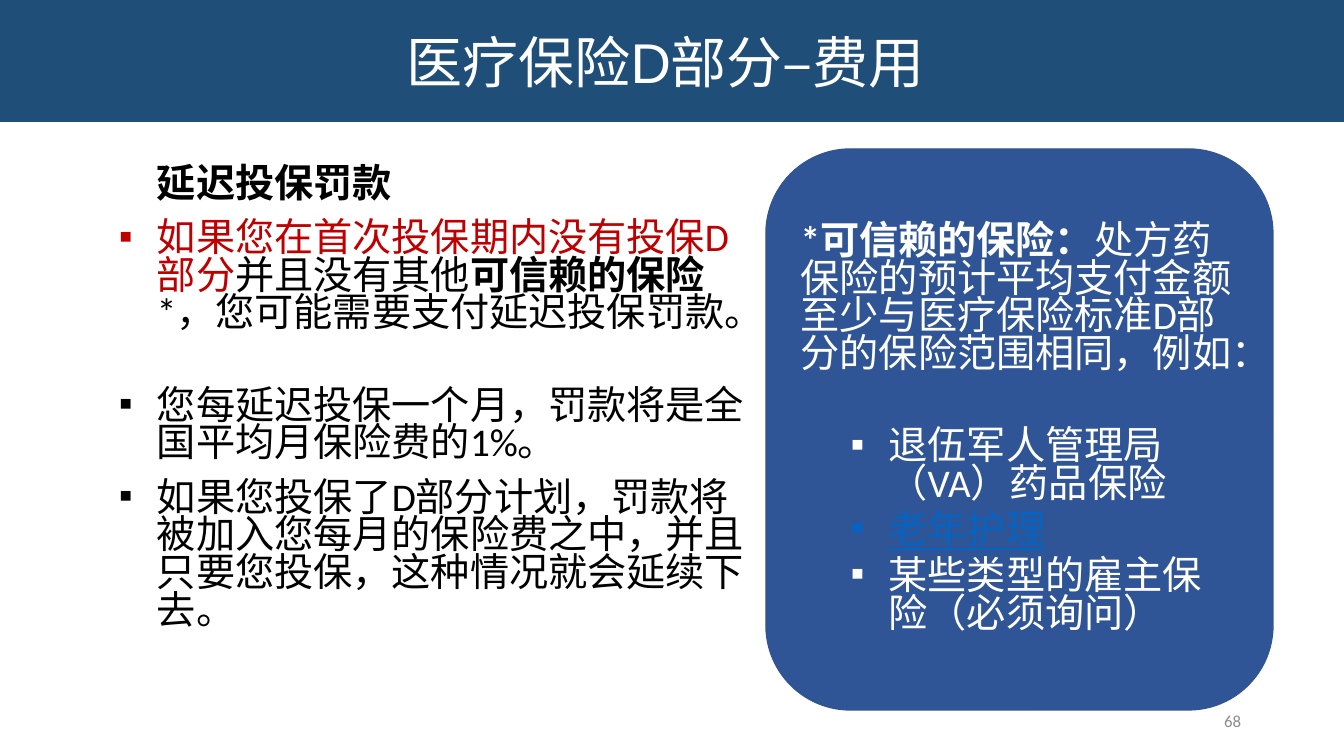
from lxml import etree
from pptx import Presentation
from pptx.dml.color import RGBColor
from pptx.enum.shapes import MSO_SHAPE
from pptx.enum.text import MSO_ANCHOR, PP_ALIGN
from pptx.oxml.ns import qn
from pptx.util import Emu, Pt

RECT, ROUND = MSO_SHAPE.RECTANGLE, MSO_SHAPE.ROUNDED_RECTANGLE
TOP, MIDDLE = MSO_ANCHOR.TOP, MSO_ANCHOR.MIDDLE
LEFT, CENTER, RIGHT = PP_ALIGN.LEFT, PP_ALIGN.CENTER, PP_ALIGN.RIGHT

COLORS = {
    "banner": "1F4E79", "panel": "2F5597", "panel_line": "325491",
    "white": "FFFFFF", "black": "000000", "red": "C00000",
    "blue": "0563C1", "gray": "8C8C8C",
}
INDENT, HANGING = 88, 38
# Paragraph spacing in points
GAP_SMALL, GAP, GAP_WIDE = 6, 12, 39


def px(n):
    return Emu(round(n * 914400 / 100.8))


def rgb(name):
    return RGBColor.from_string(COLORS[name])


def add_panel(s, kind, box, fill, line=None):
    sp = s.shapes.add_shape(kind, *map(px, box))
    sp.shadow.inherit = False
    sp.fill.solid()
    sp.fill.fore_color.rgb = rgb(fill)
    if line:
        sp.line.color.rgb = rgb(line)
        sp.line.width = Pt(1)
    else:
        sp.line.fill.background()
    return sp


def set_frame(sp, anchor):
    tf = sp.text_frame
    tf.word_wrap = True
    tf.vertical_anchor = anchor
    return tf


def next_paragraph(tf):
    first = tf.paragraphs[0]
    return tf.add_paragraph() if first.runs else first


def add_run(p, text, color, size=28, font="Calibri", bold=False, underline=False):
    r = p.add_run()
    r.text = text
    r.font.size, r.font.name = Pt(size), font
    r.font.bold, r.font.underline = bold, underline
    r.font.color.rgb = rgb(color)


def add_body(tf, after, indent=0, bullet=False):
    p = next_paragraph(tf)
    p.alignment = LEFT
    p.line_spacing = 0.8
    p.space_after = Pt(after)
    pPr = p._p.get_or_add_pPr()
    pPr.set("marL", str(px(indent)))
    pPr.set("indent", str(px(-HANGING if bullet else 0)))
    if bullet:
        etree.SubElement(pPr, qn("a:buFont"), typeface="Arial")
        etree.SubElement(pPr, qn("a:buChar"), char="▪")
    return p


def add_bullet(tf, after):
    return add_body(tf, after, INDENT, True)


def add_title(s):
    sp = add_panel(s, RECT, (0, 0, 1344, 122), "banner")
    p = next_paragraph(set_frame(sp, MIDDLE))
    p.alignment = CENTER
    add_run(p, "医疗保险D部分–费用 ", "white", 40, "Arial")


def add_penalty(s):
    sp = s.shapes.add_textbox(*map(px, (59, 162, 707, 594)))
    tf = set_frame(sp, TOP)
    add_run(add_body(tf, GAP, INDENT), "延迟投保罚款", "black", font="Arial", bold=True)
    p = add_bullet(tf, GAP_WIDE)
    add_run(p, "如果您在首次投保期内没有投保D部分", "red")
    add_run(p, "并且没有其他", "black")
    add_run(p, "可信赖的保险", "black", bold=True)
    add_run(p, "*，您可能需要支付延迟投保罚款。", "black")
    for text in (
        "您每延迟投保一个月，罚款将是全国平均月保险费的1%。",
        "如果您投保了D部分计划，罚款将被加入您每月的保险费之中，并且只要您投保，这种情况就会延续下去。",
    ):
        add_run(add_bullet(tf, GAP), text, "black")


def add_coverage(s):
    sp = add_panel(s, ROUND, (766, 149, 507, 561), "panel", "panel_line")
    tf = set_frame(sp, MIDDLE)
    p = add_body(tf, GAP_WIDE)
    add_run(p, "*可信赖的保险：", "white", bold=True)
    add_run(p, "处方药保险的预计平均支付金额至少与医疗保险标准D部分的保险范围相同，例如：", "white")
    for text, color, underline in (
        ("退伍军人管理局（VA）药品保险", "white", False),
        ("老年护理", "blue", True),
        ("某些类型的雇主保险（必须询问）", "white", False),
    ):
        add_run(add_bullet(tf, GAP_SMALL), text, color, underline=underline)


def add_page_number(s):
    sp = s.shapes.add_textbox(*map(px, (949, 701, 302, 40)))
    p = next_paragraph(set_frame(sp, MIDDLE))
    p.alignment = RIGHT
    add_run(p, "68", "gray", 12)


def main():
    prs = Presentation()
    prs.slide_width, prs.slide_height = px(1344), px(756)
    s = prs.slides.add_slide(prs.slide_layouts[6])
    # Page number
    add_page_number(s)
    # Title banner
    add_title(s)
    # Late enrolment penalty, left
    add_penalty(s)
    # Creditable coverage, right
    add_coverage(s)
    prs.save("out.pptx")


if __name__ == "__main__":
    main()
